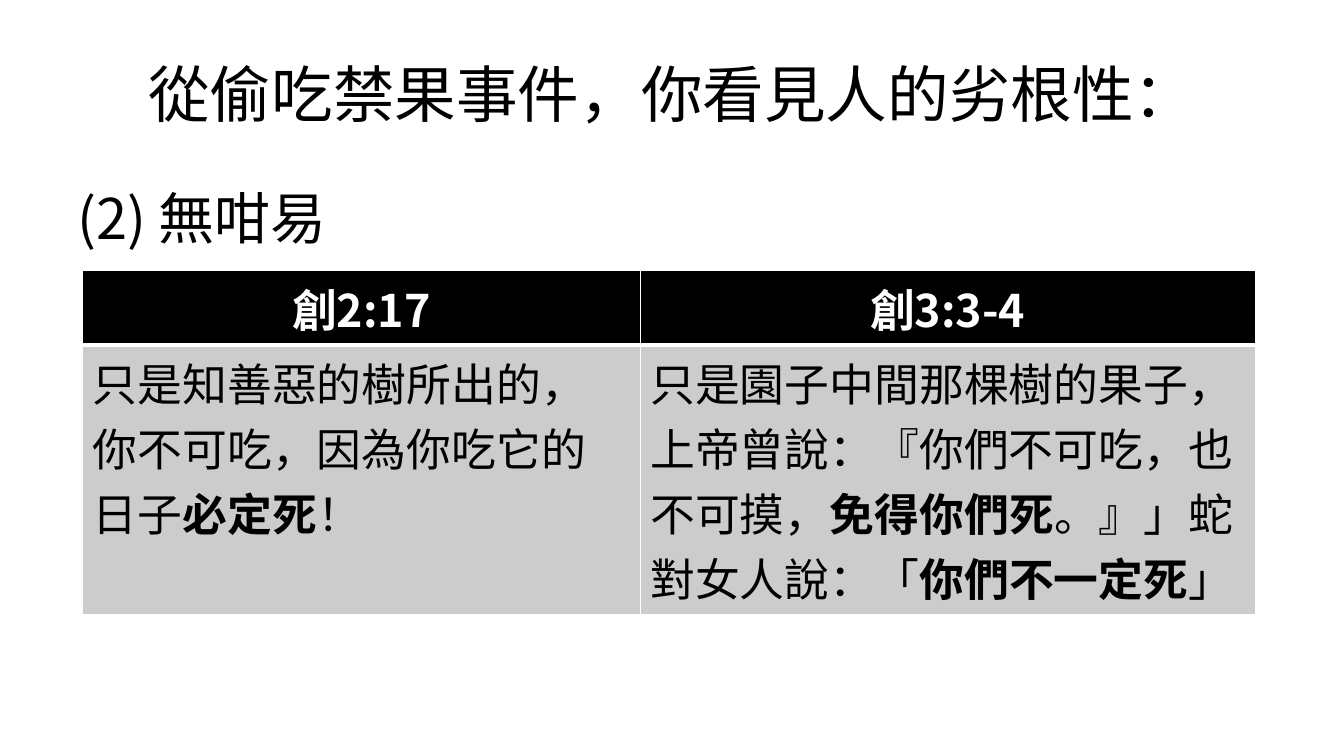
from lxml import etree
from pptx import Presentation
from pptx.dml.color import RGBColor
from pptx.enum.text import MSO_ANCHOR, PP_ALIGN
from pptx.oxml.ns import qn
from pptx.util import Inches, Pt

BLACK = RGBColor(0x00, 0x00, 0x00)
WHITE = RGBColor(0xFF, 0xFF, 0xFF)
GREY = RGBColor(0xCC, 0xCC, 0xCC)
FONT_JP = "Noto Sans CJK JP"
FONT_SC = "Noto Sans CJK SC"


def write(p, runs, size, font=FONT_JP, color=BLACK, align=PP_ALIGN.LEFT):
    """Fill a paragraph with (text, bold) runs in one Latin and East Asian font."""
    p.alignment = align
    p.font.size, p.font.name = Pt(size), font
    p.font.color.rgb = color
    defaults = p._p.get_or_add_pPr().find(qn("a:defRPr"))
    etree.SubElement(defaults, qn("a:ea"), typeface=font)
    for text, bold in runs:
        r = p.add_run()
        r.text, r.font.bold = text, bold


def add_borders(cell, widths):
    """Draw white cell borders; widths in points go left, right, top, bottom."""
    tc_pr = cell._tc.get_or_add_tcPr()
    for i, (side, width) in enumerate(zip("LRTB", widths)):
        ln = etree.Element(qn(f"a:ln{side}"), w=str(Pt(width)))
        fill = etree.SubElement(ln, qn("a:solidFill"))
        etree.SubElement(fill, qn("a:srgbClr"), val=str(WHITE))
        tc_pr.insert(i, ln)


prs = Presentation()
prs.slide_width, prs.slide_height = Inches(13.33), Inches(7.5)
s = prs.slides.add_slide(prs.slide_layouts[6])

# Title and subheading
headings = [
    ("從偷吃禁果事件，你看見人的劣根性：", 0.3, 1.25, 44, FONT_JP, PP_ALIGN.CENTER, MSO_ANCHOR.MIDDLE),
    ("(2) 無咁易", 1.77, 4.95, 40, FONT_SC, PP_ALIGN.LEFT, MSO_ANCHOR.TOP),
]
for text, top, height, size, font, align, anchor in headings:
    tf = s.shapes.add_textbox(Inches(0.67), Inches(top), Inches(12), Inches(height)).text_frame
    tf.word_wrap = True
    tf.vertical_anchor = anchor
    write(tf.paragraphs[0], [(text, False)], size, font, align=align)

# Comparison of the two passages
verses = [
    [[("創2:17", True)], [("創3:3-4", True)]],
    [
        [("只是知善惡的樹所出的，你不可吃，因為你吃它的日子", False), ("必定死", True), ("！", False)],
        [
            ("只是園子中間那棵樹的果子，上帝曾說：『你們不可吃，也不可摸，", False),
            ("免得你們死", True),
            ("。』」蛇對女人說：「", False),
            ("你們不一定死", True),
            ("」", False),
        ],
    ],
]
row_styles = [
    (0.74, BLACK, WHITE, PP_ALIGN.CENTER, (1, 1, 1, 3)),
    (2.68, GREY, BLACK, PP_ALIGN.LEFT, (1, 1, 3, 1)),
]
table = s.shapes.add_table(2, 2, Inches(0.82), Inches(2.68), Inches(11.63), Inches(3.42)).table
for column, width in zip(table.columns, (5.53, 6.1)):
    column.width = Inches(width)
for row, passages, (height, fill, color, align, borders) in zip(table.rows, verses, row_styles):
    row.height = Inches(height)
    for cell, runs in zip(row.cells, passages):
        cell.fill.solid()
        cell.fill.fore_color.rgb = fill
        add_borders(cell, borders)
        write(cell.text_frame.paragraphs[0], runs, 32, color=color, align=align)

prs.save("out.pptx")
